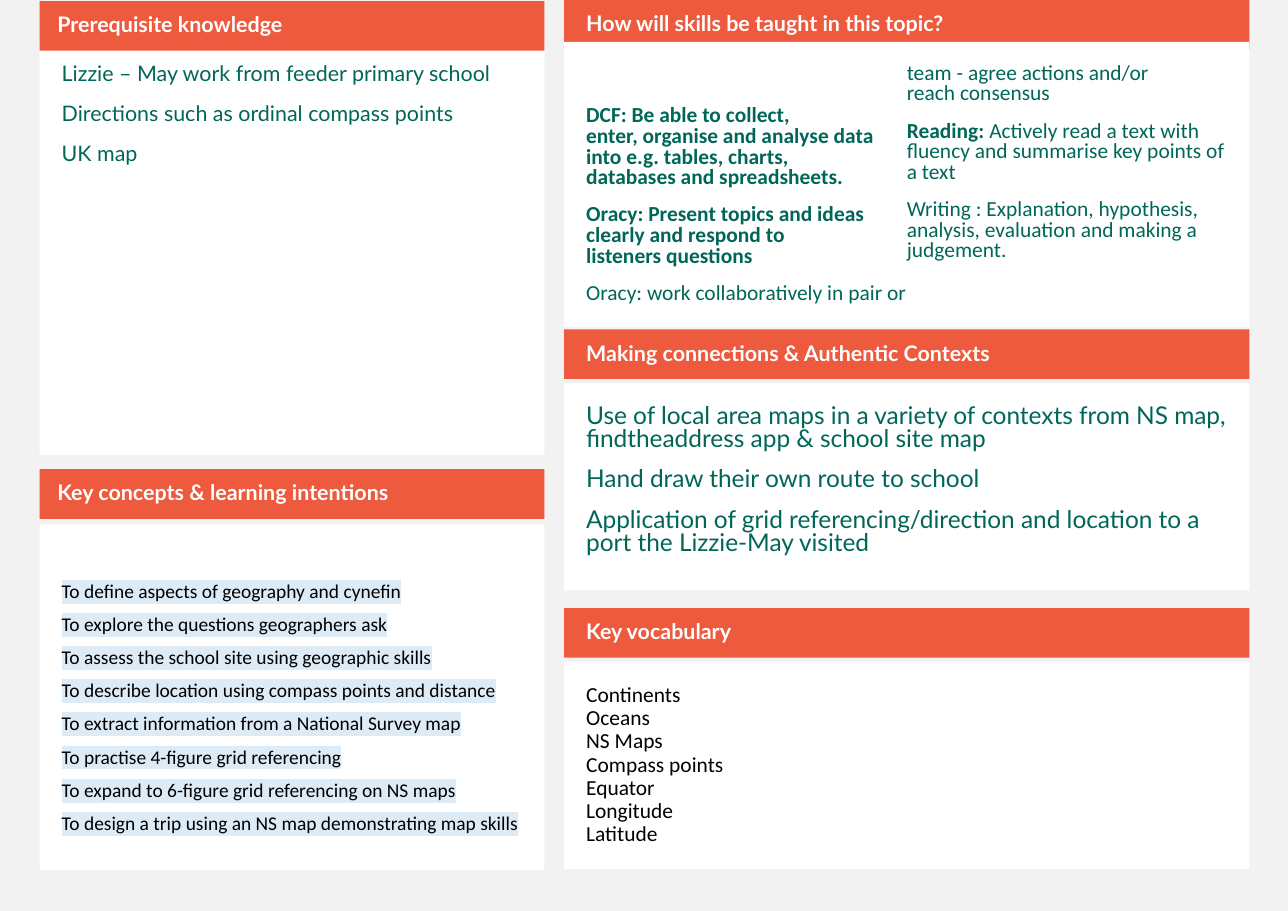
from dataclasses import dataclass

from lxml import etree
from pptx import Presentation
from pptx.dml.color import RGBColor
from pptx.enum.shapes import MSO_SHAPE
from pptx.enum.text import MSO_ANCHOR, PP_ALIGN
from pptx.oxml.ns import qn
from pptx.util import Inches, Pt

RECTANGLE = MSO_SHAPE.RECTANGLE
TOP, MIDDLE = MSO_ANCHOR.TOP, MSO_ANCHOR.MIDDLE
LEFT = PP_ALIGN.LEFT


@dataclass(frozen=True)
class Theme:
    page: str = "F2F2F2"
    panel: str = "FFFFFF"
    banner: str = "ED5A3E"
    title: str = "FFFFFF"
    accent: str = "006758"
    ink: str = "000000"
    marker: str = "DDEBF7"
    heading_font: str = "Lato"
    body_font: str = "Calibri"
    small: float = 12.7
    normal: float = 14
    large: float = 16
    gap: float = 11


THEME = Theme()
WIDTH, HEIGHT = Inches(11.69), Inches(8.27)

# Horizontal lengths and all insets are percent of the width, vertical ones of the height
BANNER_HEIGHT = 5.44
PAD = 1.71

# A tie in the wording keeps two words on one line
TIE, HARD_SPACE = "~", chr(160)


@dataclass(frozen=True)
class Column:
    left: float
    width: float
    title_inset: float


@dataclass(frozen=True)
class Span:
    text: str
    bold: bool = False


@dataclass(frozen=True)
class Style:
    font: str
    size: float
    color: str
    spacing: float = 0.9
    gap: float = THEME.gap
    marker: str | None = None


@dataclass(frozen=True)
class Banner:
    column: Column
    top: float
    title: str


@dataclass(frozen=True)
class Panel:
    column: Column
    top: float
    height: float
    style: Style
    paras: list[list[Span]]
    insets: tuple[float, float, float, float] = (PAD, PAD, PAD, PAD)
    fill: str | None = THEME.panel


def plain(*lines: str) -> list[list[Span]]:
    return [[Span(line)] for line in lines]


NARROW = Column(3.08, 39.18, 1.37)
WIDE = Column(43.8, 53.21, PAD)
HALF = WIDE.width / 2
SKILLS_RIGHT = Column(WIDE.left + HALF, HALF, PAD)

TITLE = Style(THEME.heading_font, THEME.normal, THEME.title)
PRIOR = Style(THEME.heading_font, THEME.normal, THEME.accent)
CONCEPTS = Style(THEME.body_font, THEME.small, THEME.ink, 0.7, marker=THEME.marker)
SKILLS = Style(THEME.body_font, THEME.normal, THEME.accent, 0.8)
CONTEXTS = Style(THEME.heading_font, THEME.large, THEME.accent, 0.8)
VOCABULARY = Style(THEME.body_font, THEME.normal, THEME.ink, gap=0)

# Sections, from back to front
PARTS: list[Banner | Panel] = [
    Panel(NARROW, 4.47, 45.47, PRIOR, plain(
        "Lizzie – May work from feeder primary school",
        "Directions such as ordinal compass points",
        "UK map")),
    Banner(NARROW, 0.12, "Prerequisite knowledge"),
    Panel(NARROW, 57.56, 37.97, CONCEPTS, plain(
        "To define aspects of geography and cynefin",
        "To explore the questions geographers ask",
        "To assess the school site using geographic skills",
        "To describe location using compass points and distance",
        "To extract information from a National Survey map",
        "To practise 4-figure grid referencing",
        "To expand to 6-figure grid referencing on NS maps",
        "To design a trip using an NS map demonstrating map skills"),
        (PAD, 4.73, 0.86, PAD)),
    Banner(NARROW, 51.51, "Key concepts & learning intentions"),
    Banner(WIDE, 0, "How will skills be taught in this topic?"),
    Banner(WIDE, 36.15, "Making connections & Authentic Contexts"),
    Banner(WIDE, 66.75, "Key vocabulary"),
    Panel(WIDE, 4.6, 31.32, SKILLS, [
        [Span("DCF: Be able to collect, enter,~organise~and~analyse~data "
              "into~e.g.~tables,~charts, databases~and~spreadsheets.", True)],
        [Span("Oracy: Present topics and ideas clearly and respond to "
              "listeners~questions", True)],
        [Span("Oracy: work collaboratively in pair or")]],
        (PAD, 5.01, HALF, PAD)),
    Panel(SKILLS_RIGHT, 4.6, 31.32, SKILLS, [
        [Span("team - agree actions and/or reach~consensus")],
        [Span("Reading: ", True),
         Span("Actively read a text with fluency and summarise key points of a~text")],
        [Span("Writing : Explanation, hypothesis, analysis, evaluation "
              "and making a judgement.")]],
        (0, PAD, PAD, PAD), fill=None),
    Panel(WIDE, 72.67, 22.73, VOCABULARY, plain(
        "Continents", "Oceans", "NS Maps", "Compass points",
        "Equator", "Longitude", "Latitude")),
    Panel(WIDE, 42.08, 22.73, CONTEXTS, plain(
        "Use of local area maps in a variety of contexts from NS map, "
        "findtheaddress app & school site map",
        "Hand draw their own route to school",
        "Application of grid referencing/direction and location to a "
        "port the Lizzie-May visited")),
]


def across(percent: float) -> int:
    return round(WIDTH * percent / 100)


def down(percent: float) -> int:
    return round(HEIGHT * percent / 100)


def add_span(para, text: str, *, style: Style, bold: bool = False) -> None:
    span = para.add_run()
    span.text = text.replace(TIE, HARD_SPACE)
    font = span.font
    font.name, font.size, font.bold = style.font, Pt(style.size), bold
    font.color.rgb = RGBColor.from_string(style.color)
    if style.marker:
        highlight = etree.Element(qn("a:highlight"))
        etree.SubElement(highlight, qn("a:srgbClr"), val=style.marker)
        span._r.rPr.find(qn("a:solidFill")).addnext(highlight)


def add_box(page, column: Column, top: float, height: float, *, fill: str | None,
            style: Style, paras: list[list[Span]], anchor: MSO_ANCHOR,
            insets: tuple[float, float, float, float]) -> None:
    box = page.shapes.add_shape(RECTANGLE, across(column.left), down(top),
                                across(column.width), down(height))
    box.shadow.inherit = False
    if fill:
        box.fill.solid()
        box.fill.fore_color.rgb = RGBColor.from_string(fill)
    else:
        box.fill.background()
    box.line.fill.background()
    frame = box.text_frame
    frame.word_wrap = True
    frame.vertical_anchor = anchor
    (frame.margin_left, frame.margin_top,
     frame.margin_right, frame.margin_bottom) = map(across, insets)
    for index, spans in enumerate(paras):
        para = frame.add_paragraph() if index else frame.paragraphs[0]
        para.alignment = LEFT
        para.line_spacing = style.spacing
        para.space_before = Pt(style.gap)
        for span in spans:
            add_span(para, span.text, style=style, bold=span.bold)


def add_part(page, part: Banner | Panel) -> None:
    if isinstance(part, Banner):
        add_box(page, part.column, part.top, BANNER_HEIGHT, fill=THEME.banner,
                style=TITLE, paras=[[Span(part.title, True)]], anchor=MIDDLE,
                insets=(part.column.title_inset, 0.43, 0.86, 0.43))
    else:
        add_box(page, part.column, part.top, part.height, fill=part.fill,
                style=part.style, paras=part.paras, anchor=TOP, insets=part.insets)


def main() -> None:
    deck = Presentation()
    deck.slide_width, deck.slide_height = WIDTH, HEIGHT
    page = deck.slides.add_slide(deck.slide_layouts[6])
    page.background.fill.solid()
    page.background.fill.fore_color.rgb = RGBColor.from_string(THEME.page)
    for part in PARTS:
        add_part(page, part)
    deck.save("out.pptx")


if __name__ == "__main__":
    main()
